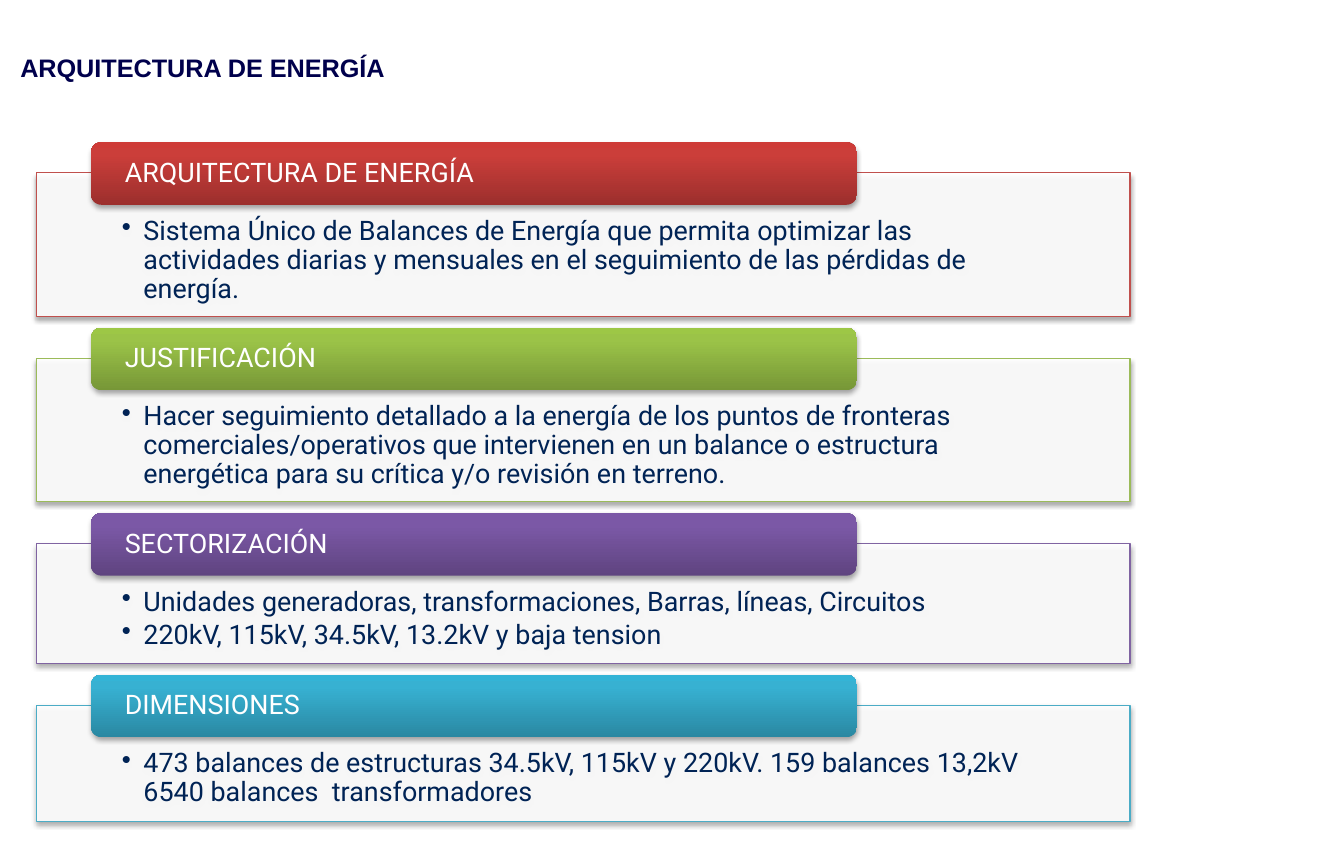
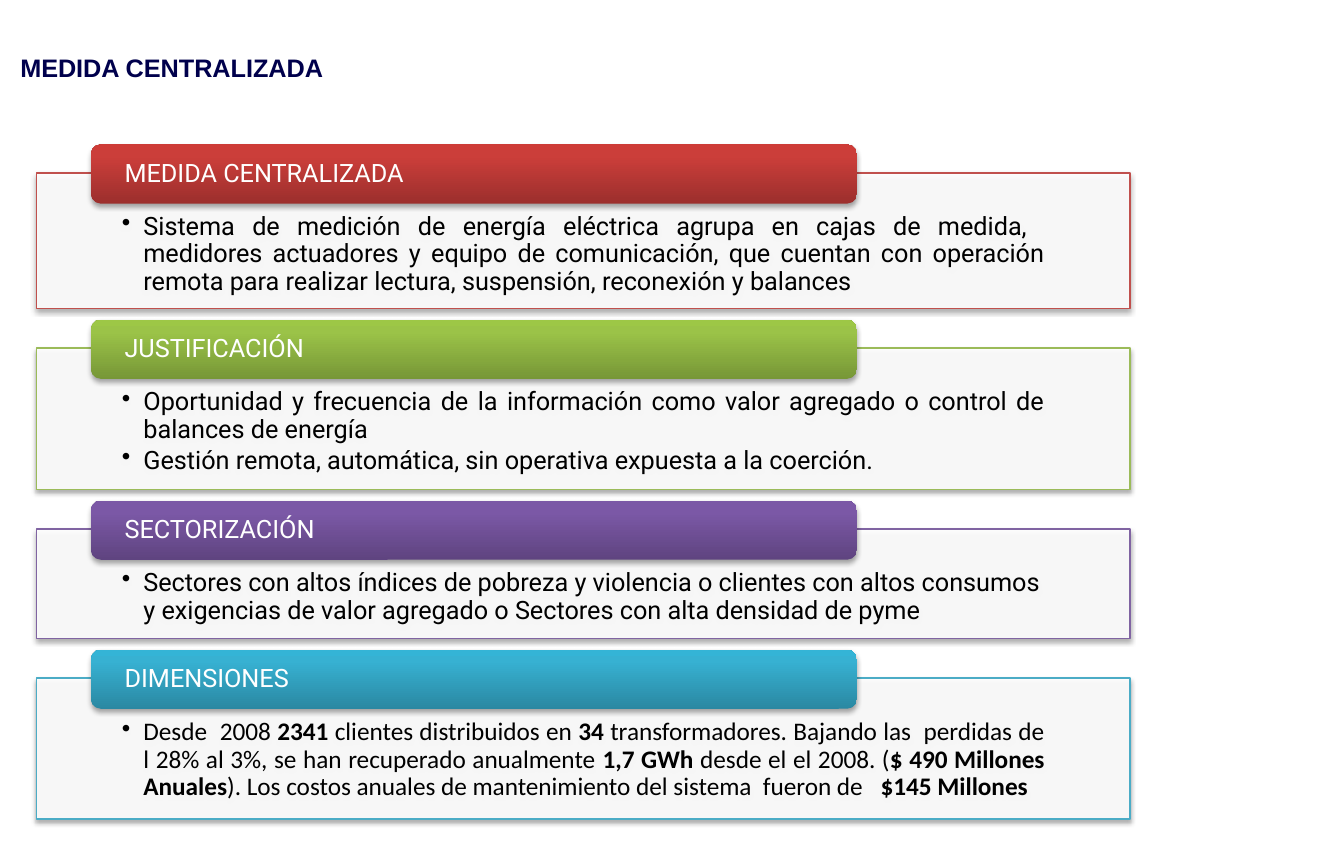
from copy import deepcopy
from dataclasses import dataclass
from typing import Any, NamedTuple

from pptx import Presentation
from pptx import util as u
from pptx.dml.color import RGBColor
from pptx.enum import shapes, text
from pptx.oxml import ns
from pptx.oxml import xmlchemy as xml


class Accent(NamedTuple):
    line: str
    stops: tuple[str, str, str]


@dataclass(frozen=True)
class Theme:
    title: str = "00004C"
    white: str = "FFFFFF"
    black: str = "000000"
    navy: str = "002355"
    title_size: float = 16
    title_font: str = "Arial"
    body_font: str = "Roboto"
    accents: tuple[Accent, ...] = (
        Accent("C0504D", ("9C2F2D", "CB3E3A", "CE3B37")),
        Accent("9BBB59", ("779737", "9BC348", "9DC746")),
        Accent("8064A2", ("5F4480", "7B58A6", "7C57A8")),
        Accent("4BACC6", ("2A88A2", "37B1D2", "34B4D6")),
    )


class Section(NamedTuple):
    heading: str
    height: float
    bullets: tuple[str, ...]
    justified: bool = False
    font: str = "Roboto"


@dataclass(frozen=True)
class Topic:
    title: str
    size: float
    color: str
    tab_height: float
    overhang: float
    inset_top: float
    inset_bottom: float
    sections: tuple[Section, ...]


THEME = Theme()
FIRST_PANEL_TOP = 1.52
SECTION_GAP = 0.1
BOLD_MARK = "**"

TOPICS = (
    Topic("ARQUITECTURA DE ENERGÍA", 17, THEME.navy, 0.55, 0.27, 0.39, 0.13, (
        Section("ARQUITECTURA DE ENERGÍA", 1.26, (
            "Sistema Único de Balances de Energía que permita optimizar las actividades "
            "diarias y mensuales en el seguimiento de las pérdidas de energía.",)),
        Section("JUSTIFICACIÓN", 1.26, (
            "Hacer seguimiento detallado a la energía de los puntos de fronteras "
            "comerciales/operativos que intervienen en un balance o estructura energética "
            "para su crítica y/o revisión en terreno.",)),
        Section("SECTORIZACIÓN", 1.05, (
            "Unidades generadoras, transformaciones, Barras, líneas, Circuitos",
            "220kV, 115kV, 34.5kV, 13.2kV y baja tension")),
        Section("DIMENSIONES", 1.02, (
            "473 balances de estructuras 34.5kV, 115kV y 220kV. 159 balances 13,2kV "
            "6540 balances  transformadores",)),
    )),
    Topic("MEDIDA CENTRALIZADA", 16, THEME.black, 0.52, 0.25, 0.36, 0.12, (
        Section("MEDIDA CENTRALIZADA", 1.19, (
            "Sistema de medición de energía eléctrica agrupa en cajas de medida,  "
            "medidores actuadores y equipo de comunicación, que cuentan con operación "
            "remota para realizar lectura, suspensión, reconexión y balances",), True),
        Section("JUSTIFICACIÓN", 1.24, (
            "Oportunidad y frecuencia de la información como valor agregado o control de "
            "balances de energía",
            "Gestión remota, automática, sin operativa expuesta a la coerción."), True),
        Section("SECTORIZACIÓN", 0.96, (
            "Sectores con altos índices de pobreza y violencia o clientes con altos consumos "
            "y exigencias de valor agregado o Sectores con alta densidad de pyme",)),
        Section("DIMENSIONES", 1.24, (
            "Desde  2008 **2341** clientes distribuidos en **34 **transformadores. Bajando "
            "las  perdidas de l 28% al 3%, se han recuperado anualmente **1,7 GWh **desde el "
            "el 2008. (**$ 490 Millones Anuales**). Los costos anuales de mantenimiento del "
            "sistema  fueron de **  $145 Millones**",), True, "Calibri"),
    )),
)


def apply(target: Any, values: dict[str, Any]) -> None:
    for name, value in values.items():
        setattr(target, name, value)


def add_element(parent: Any, tag: str, **attributes: str) -> Any:
    element = xml.OxmlElement(tag)
    for name, value in attributes.items():
        element.set(name, value)
    parent.append(element)
    return element


def set_frame(box: Any, left: float, top: float, right: float, bottom: float,
              anchor: Any) -> None:
    apply(box.text_frame, {
        "word_wrap": True, "vertical_anchor": anchor,
        "margin_left": u.Inches(left), "margin_top": u.Inches(top),
        "margin_right": u.Inches(right), "margin_bottom": u.Inches(bottom),
    })


def add_span(para: Any, words: str, size: float, font: str, color: str,
             bold: bool = False) -> None:
    span = para.add_run()
    span.text = words
    apply(span.font, {"size": u.Pt(size), "name": font, "bold": bold})
    span.font.color.rgb = RGBColor.from_string(color)


def add_block(page: Any, kind: Any, left: float, top: float, width: float,
              height: float) -> Any:
    block = page.shapes.add_shape(kind, u.Inches(left), u.Inches(top),
                                  u.Inches(width), u.Inches(height))
    block.shadow.inherit = False
    effects = block._element.spPr.find(ns.qn("a:effectLst"))
    shadow = add_element(effects, "a:outerShdw", blurRad=str(u.Pt(3.1)), dist=str(u.Pt(1.8)),
                         dir="5400000", rotWithShape="0")
    color = add_element(shadow, "a:srgbClr", val=THEME.black)
    add_element(color, "a:alpha", val="35000")
    return block


def add_panel(page: Any, topic: Topic, section: Section, accent: Accent, top: float) -> None:
    panel = add_block(page, shapes.MSO_SHAPE.RECTANGLE, 0.32, top, 9.61, section.height)
    panel.fill.solid()
    panel.fill.fore_color.rgb = RGBColor.from_string(THEME.white)
    color = panel._element.spPr.find(ns.qn("a:solidFill")).find(ns.qn("a:srgbClr"))
    add_element(color, "a:alpha", val="90000")
    panel.line.color.rgb = RGBColor.from_string(accent.line)
    panel.line.width = u.Pt(0.75)
    set_frame(panel, 0.75, topic.inset_top, 0.75, topic.inset_bottom, text.MSO_ANCHOR.TOP)
    align = text.PP_ALIGN.JUSTIFY if section.justified else text.PP_ALIGN.LEFT
    frame = panel.text_frame
    for index, bullet in enumerate(section.bullets):
        para = frame.add_paragraph() if index else frame.paragraphs[0]
        apply(para, {"level": 1, "alignment": align, "line_spacing": 0.9,
                     "space_before": u.Pt(0), "space_after": u.Pt(topic.size * 0.15)})
        properties = para._p.get_or_add_pPr()
        properties.set("marL", str(u.Inches(0.19)))
        properties.set("indent", str(u.Inches(-0.19)))
        add_element(properties, "a:buChar", char="•")
        for position, words in enumerate(bullet.split(BOLD_MARK)):
            if words:
                add_span(para, words, topic.size, section.font, topic.color,
                         position % 2 == 1)


def add_tab(page: Any, topic: Topic, section: Section, accent: Accent, top: float) -> None:
    tab = add_block(page, shapes.MSO_SHAPE.ROUNDED_RECTANGLE, 0.8, top, 6.73,
                    topic.tab_height)
    tab.line.fill.background()
    tab.fill.gradient()
    tab.fill.gradient_angle = 90
    stop_list = tab._element.spPr.find(ns.qn("a:gradFill")).find(ns.qn("a:gsLst"))
    stop_list.append(deepcopy(stop_list[-1]))
    for stop, position, color in zip(tab.fill.gradient_stops, (0, 0.8, 1), accent.stops):
        stop.position = position
        stop.color.rgb = RGBColor.from_string(color)
    set_frame(tab, 0.27, 0, 0.27, 0, text.MSO_ANCHOR.MIDDLE)
    para = tab.text_frame.paragraphs[0]
    apply(para, {"alignment": text.PP_ALIGN.LEFT, "line_spacing": 0.9})
    add_span(para, section.heading, topic.size, THEME.body_font, THEME.white)


def add_title(page: Any, title: str) -> None:
    box = page.shapes.add_textbox(u.Inches(0.08), u.Inches(0.01),
                                  u.Inches(8.56), u.Inches(1.17))
    set_frame(box, 0.1, 0.05, 0.1, 0.05, text.MSO_ANCHOR.MIDDLE)
    add_span(box.text_frame.paragraphs[0], title, THEME.title_size, THEME.title_font,
             THEME.title, True)


def add_topic(deck: Any, topic: Topic) -> None:
    page = deck.slides.add_slide(deck.slide_layouts[6])
    add_title(page, topic.title)
    top = FIRST_PANEL_TOP
    for section, accent in zip(topic.sections, THEME.accents):
        add_panel(page, topic, section, accent, top)
        add_tab(page, topic, section, accent, top - topic.overhang)
        top += section.height + SECTION_GAP + topic.overhang


def main() -> None:
    deck = Presentation()
    apply(deck, {"slide_width": u.Inches(11.81), "slide_height": u.Inches(7.48)})
    for topic in TOPICS:
        add_topic(deck, topic)
    deck.save("out.pptx")


if __name__ == "__main__":
    main()
